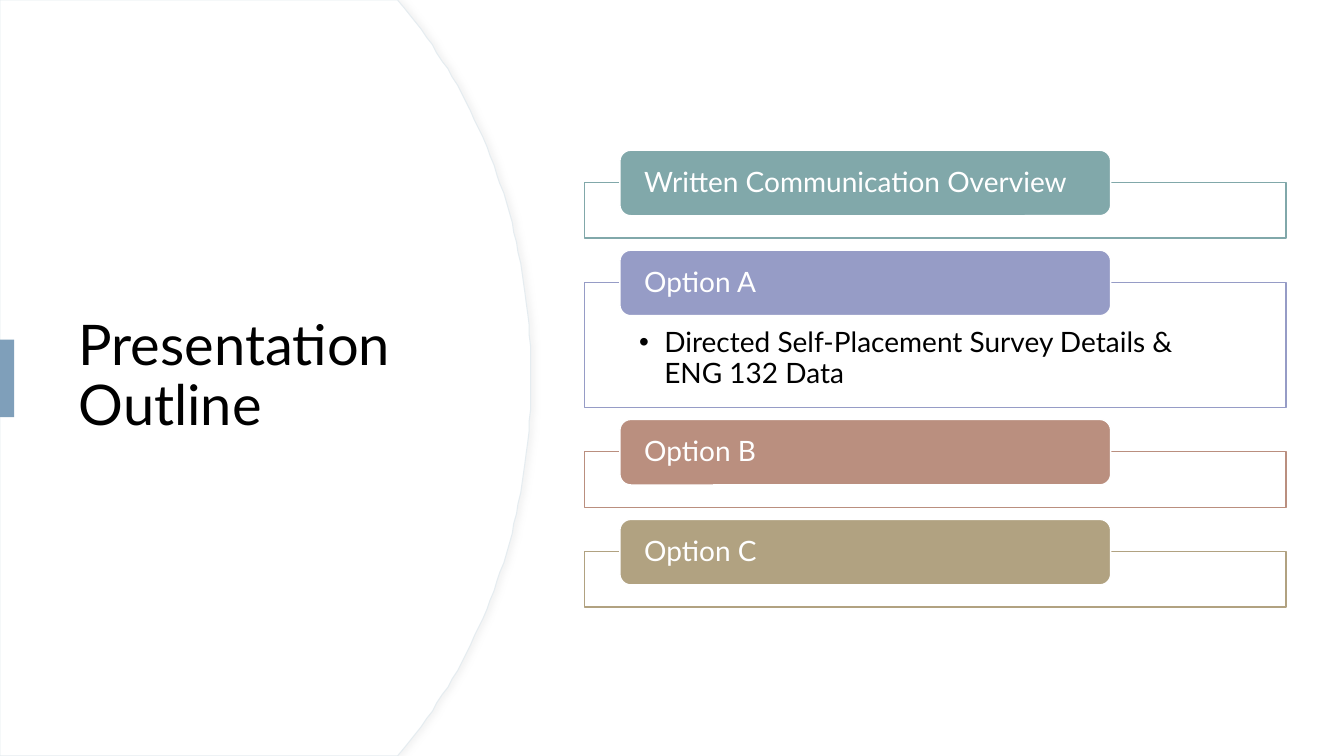
"""Build the presentation outline slide: a title in an arc and four tabs."""
from pptx import Presentation
from pptx.dml.color import RGBColor
from pptx.enum import shapes, text
from pptx.oxml import parse_xml
from pptx.oxml.ns import nsdecls, qn
from pptx.util import Pt

TITLE = "Presentation Outline"
ITEMS = [
    ("Written Communication Overview", "81A8AA", None),
    ("Option A", "969CC6", "Directed Self-Placement Survey Details & ENG 132 Data"),
    ("Option B", "BA8F7F", None),
    ("Option C", "B1A281", None),
]
THEME = {
    "font": "Lato", "head": 40, "size": 20, "dark": "000000", "light": "FFFFFF",
    "mark": "7F9FBA", "edge": "E5ECF0", "shade": "D9D9D9",
}
WIDE, HIGH = 960, 540
CURVE = [(288.7, 5.8), (344.9, 73.4), (379.4, 167), (379.4, 270)]
STEPS = 40
LEFT, WIDTH, TOP = 417.6, 501.1, 107.3
INSET, TAB, TALL = 25.2, 350.6, 46.8
DROP, GAP, SHORT, LONG = 23, 8.7, 39.7, 89.2


def color(code):
    """Turn a hex code into a colour."""
    return RGBColor.from_string(code)


def paint(shape, fill, line=None, size=1):
    """Set fill and outline of a shape."""
    shape.fill.solid()
    shape.fill.fore_color.rgb = color(fill)
    if line:
        shape.line.color.rgb = color(line)
        shape.line.width = Pt(size)
    else:
        shape.line.fill.background()


def block(slide, kind, box, fill, line=None):
    """Add a flat preset shape."""
    shape = slide.shapes.add_shape(kind, *map(Pt, box))
    shape.shadow.inherit = False
    paint(shape, fill, line)
    return shape


def write(shape, words, size, ink, pads, anchor):
    """Fill a shape with one left-aligned paragraph."""
    frame = shape.text_frame
    frame.word_wrap = True
    frame.auto_size = text.MSO_AUTO_SIZE.NONE
    frame.vertical_anchor = anchor
    (frame.margin_left, frame.margin_top,
     frame.margin_right, frame.margin_bottom) = map(Pt, pads)
    para = frame.paragraphs[0]
    para.alignment = text.PP_ALIGN.LEFT
    para.line_spacing = 0.9
    para.space_before = Pt(0)
    run = para.add_run()
    run.text = words
    run.font.name = THEME["font"]
    run.font.size = Pt(size)
    run.font.color.rgb = color(ink)
    return para


def place(shape, box):
    """Move and size a placeholder."""
    shape.left, shape.top, shape.width, shape.height = map(Pt, box)


def bend(part):
    """Give the point of the upper curve at a fraction from 0 to 1."""
    rest = 1 - part
    rates = (rest ** 3, 3 * rest ** 2 * part, 3 * rest * part ** 2, part ** 3)
    return tuple(sum(r * spot[axis] for r, spot in zip(rates, CURVE))
                 for axis in (0, 1))


def arc(slide):
    """Draw the round panel behind the title."""
    upper = [bend(step / STEPS) for step in range(STEPS + 1)]
    lower = [(x, HIGH - y) for x, y in reversed(upper[:-1])]
    edge = [(283.7, 0), *upper, *lower, (283.7, HIGH), (0, HIGH)]
    pen = slide.shapes.build_freeform(0, 0, scale=Pt(1))
    pen.add_line_segments(edge, close=True)
    shape = pen.convert_to_shape()
    shape.shadow.inherit = False
    paint(shape, THEME["light"], THEME["edge"], 0.75)
    glow = shape.element.spPr.find(qn("a:effectLst"))
    glow.append(parse_xml(
        f'<a:outerShdw {nsdecls("a")} blurRad="{Pt(4)}" dist="{Pt(3)}" dir="0">'
        f'<a:srgbClr val="{THEME["shade"]}"><a:alpha val="30000"/></a:srgbClr>'
        '</a:outerShdw>'))


def detail(shape, box, words, line):
    """Format the body placeholder as an open box with a bullet."""
    place(shape, box)
    paint(shape, THEME["light"], line)
    para = write(shape, words, THEME["size"], THEME["dark"],
                 (38.9, 33.1, 38.9, 11.5), text.MSO_ANCHOR.TOP)
    props = para._p.get_or_add_pPr()
    props.set("marL", str(Pt(18)))
    props.set("indent", str(-Pt(18)))
    props.append(parse_xml(f'<a:buFont {nsdecls("a")} typeface="Arial"/>'))
    props.append(parse_xml(f'<a:buChar {nsdecls("a")} char="•"/>'))


def main():
    """Compose and save the slide."""
    deck = Presentation()
    deck.slide_width, deck.slide_height = Pt(WIDE), Pt(HIGH)
    slide = deck.slides.add_slide(deck.slide_layouts[1])
    head, body = slide.placeholders
    kinds = shapes.MSO_SHAPE
    arc(slide)
    for holder in (head, body):
        slide.shapes.element.append(holder.element)
    place(head, (49, 91.4, 283.7, 356.4))
    write(head, TITLE, THEME["head"], THEME["dark"],
          (7.2, 3.6, 7.2, 3.6), text.MSO_ANCHOR.MIDDLE)
    block(slide, kinds.RECTANGLE, (0, 242.6, 10.1, 55.4), THEME["mark"])

    top = TOP
    for label, hue, note in ITEMS:
        tall = LONG if note else SHORT
        box = (LEFT, top + DROP, WIDTH, tall)
        if note:
            detail(body, box, note, hue)
        else:
            block(slide, kinds.RECTANGLE, box, THEME["light"], hue)
        tab = block(slide, kinds.ROUNDED_RECTANGLE,
                    (LEFT + INSET, top, TAB, TALL), hue, THEME["light"])
        write(tab, label, THEME["size"], THEME["light"],
              (15.1, 0, 15.1, 0), text.MSO_ANCHOR.MIDDLE)
        top += DROP + tall + GAP
    deck.save("out.pptx")


if __name__ == "__main__":
    main()
